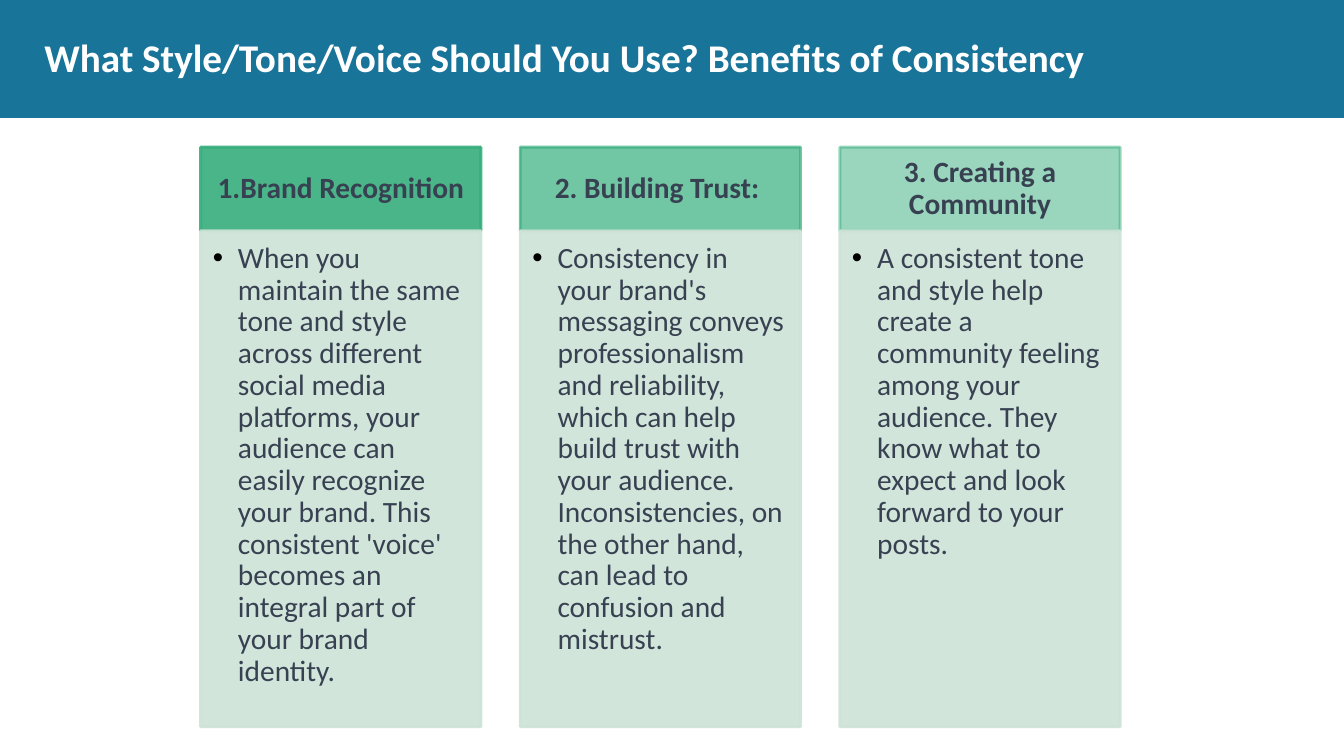
from lxml.etree import SubElement
from pptx import Presentation
from pptx.dml.color import RGBColor
from pptx.enum.shapes import MSO_SHAPE
from pptx.enum.text import MSO_ANCHOR as ANCHOR, PP_ALIGN as ALIGN
from pptx.oxml.ns import qn
from pptx.util import Inches, Pt

FONT = "Calibri"
BLUE, GREEN, PALE = "187498", "36AE7C", "CEE3D7"
WHITE, BLACK, SLATE = "FFFFFF", "000000", "374151"
LEFT, TOP, WIDTH, PITCH = 1.99, 1.46, 2.78, 3.17
HEAD_H, BODY_H = 0.83, 4.92

BENEFITS = [
    ("1.Brand Recognition", 90,
     "When you maintain the same tone and style across different social media "
     "platforms, your audience can easily recognize your brand. This consistent "
     "'voice' becomes an integral part of your brand identity."),
    ("2. Building Trust: ", 70,
     "Consistency in your brand's messaging conveys professionalism and "
     "reliability, which can help build trust with your audience. "
     "Inconsistencies, on the other hand, can lead to confusion and mistrust."),
    ("3. Creating a Community", 50,
     "A consistent tone and style help create a community feeling among your "
     "audience. They know what to expect and look forward to your posts."),
]


def rgb(color):
    """Turn a hex string into a colour."""
    return RGBColor.from_string(color)


def add_box(s, x, y, w, h, color, opacity=None):
    """Add a rectangle; one with an opacity also gets a matching outline."""
    sp = s.shapes.add_shape(MSO_SHAPE.RECTANGLE, Inches(x), Inches(y), Inches(w), Inches(h))
    sp.shadow.inherit = False
    sp.fill.solid()
    sp.fill.fore_color.rgb = rgb(color)
    if opacity is None:
        sp.line.fill.background()
        return sp
    sp.line.color.rgb = rgb(color)
    sp.line.width = Pt(2)
    for clr in sp._element.spPr.iter(qn("a:srgbClr")):
        SubElement(clr, qn("a:alpha")).set("val", str(opacity * 1000))
    return sp


def write(sp, text, size, color, anchor, align, insets, bold=False):
    """Write one wrapped paragraph and return it."""
    tf = sp.text_frame
    tf.word_wrap = True
    tf.vertical_anchor = anchor
    tf.margin_left, tf.margin_top, tf.margin_right, tf.margin_bottom = map(Inches, insets)
    p = tf.paragraphs[0]
    p.alignment = align
    r = p.add_run()
    r.text = text
    r.font.name, r.font.size, r.font.bold = FONT, Pt(size), bold
    r.font.color.rgb = rgb(color)
    return p


def add_bullet(p, indent, color):
    """Give a paragraph a hanging round bullet."""
    pPr = p._p.get_or_add_pPr()
    pPr.set("marL", str(Inches(indent)))
    pPr.set("indent", str(-Inches(indent)))
    SubElement(SubElement(pPr, qn("a:buClr")), qn("a:srgbClr")).set("val", color)
    SubElement(pPr, qn("a:buFont")).set("typeface", "Arial")
    SubElement(pPr, qn("a:buChar")).set("char", "•")


def add_title(s, text):
    """Add the title band and its text."""
    add_box(s, 0, 0, 13.33, 1.17, BLUE)
    sp = s.shapes.add_textbox(Inches(0.44), Inches(0.19), Inches(12.46), Inches(0.74))
    write(sp, text, 28, WHITE, ANCHOR.MIDDLE, ALIGN.LEFT, (0, 0, 0, 0), bold=True)


def add_benefit(s, x, heading, opacity, body):
    """Add one column: a heading box above a bulleted body box."""
    head = add_box(s, x, TOP, WIDTH, HEAD_H, GREEN, opacity)
    p = write(head, heading, 21, SLATE, ANCHOR.MIDDLE, ALIGN.CENTER,
              (0.14, 0.09, 0.14, 0.09), bold=True)
    p.line_spacing = 0.9
    panel = add_box(s, x, TOP + HEAD_H, WIDTH, BODY_H, PALE, 90)
    p = write(panel, body, 21, SLATE, ANCHOR.TOP, ALIGN.LEFT, (0.12, 0.12, 0.16, 0.18))
    p.line_spacing = 0.9
    add_bullet(p, 0.25, BLACK)


def main():
    """Build the slide and save it."""
    prs = Presentation()
    prs.slide_width, prs.slide_height = Inches(13.33), Inches(7.5)
    s = prs.slides.add_slide(prs.slide_layouts[6])
    add_title(s, "What Style/Tone/Voice Should You Use? Benefits of Consistency")
    for i, (heading, opacity, body) in enumerate(BENEFITS):
        add_benefit(s, LEFT + i * PITCH, heading, opacity, body)
    prs.save("out.pptx")


if __name__ == "__main__":
    main()
